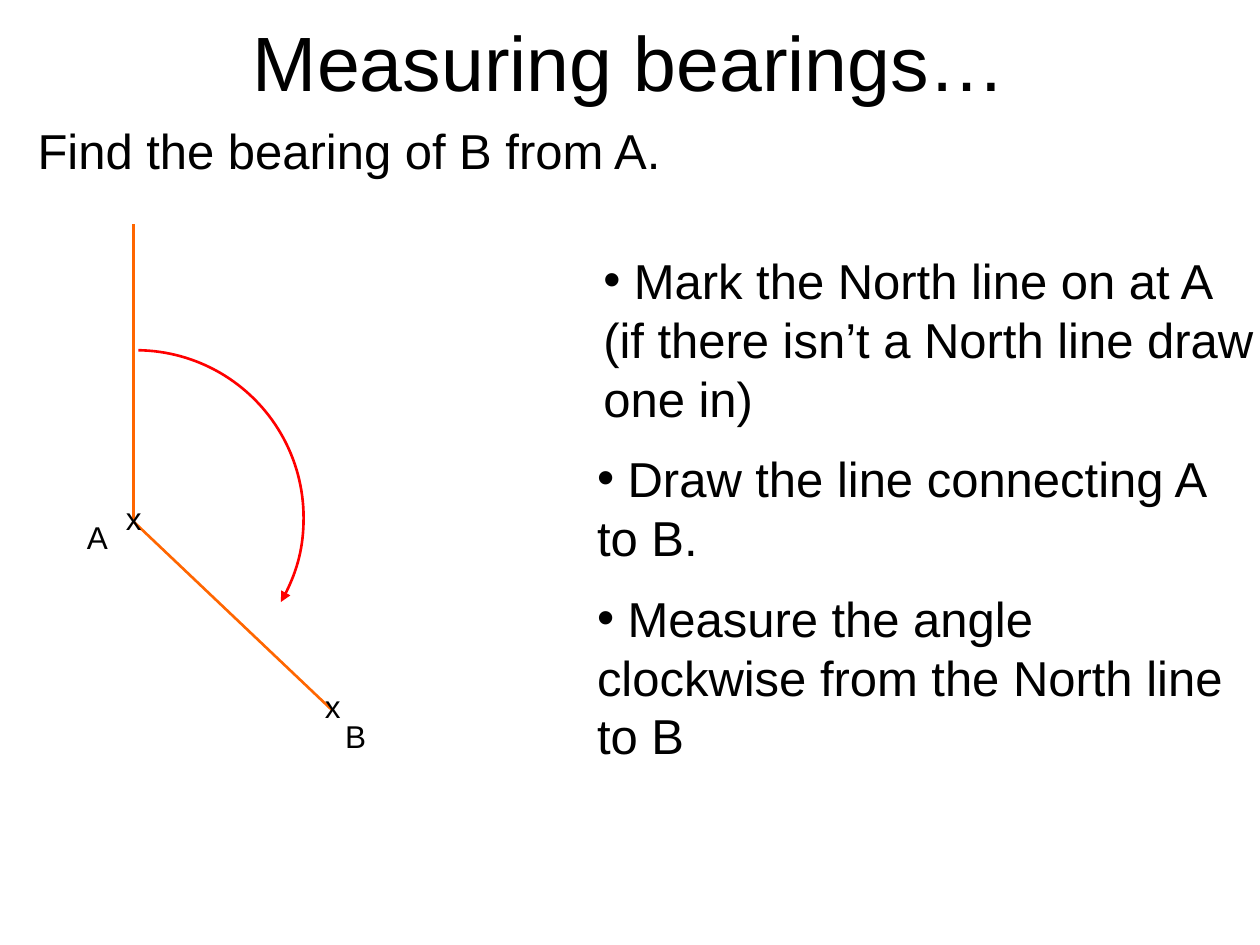
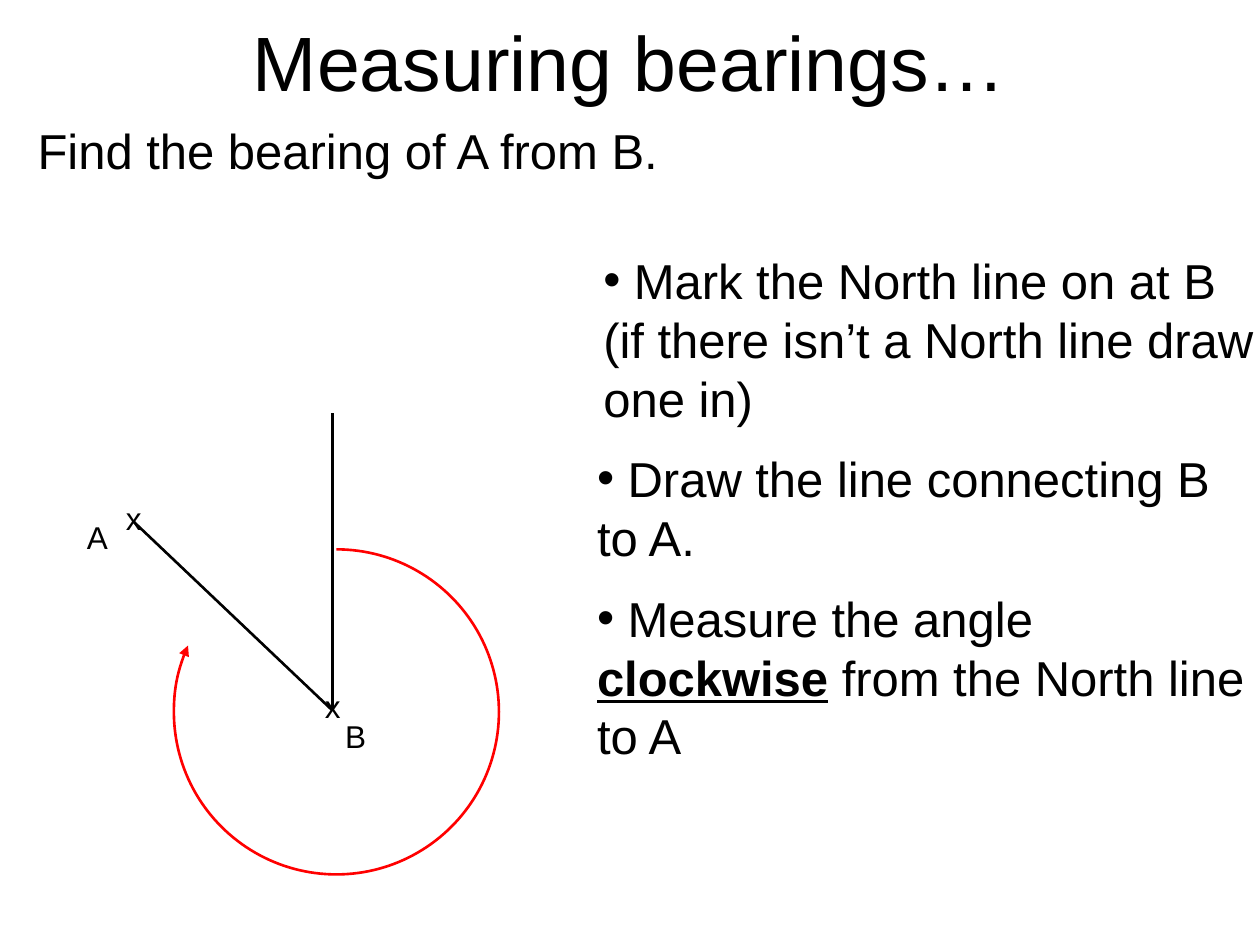
import dataclasses

import pptx
import pptx.dml.color
import pptx.enum.shapes
import pptx.enum.text
import pptx.oxml.ns
import pptx.util
from lxml import etree

Inches = pptx.util.Inches
Pt = pptx.util.Pt
Color = pptx.dml.color.RGBColor.from_string


@dataclasses.dataclass(frozen=True)
class Theme:
    font: str = "Arial"
    ink: str = "000000"
    answer: str = "FF6600"
    turn: str = "FF0000"
    title_size: int = 44
    body_size: int = 28
    label_size: int = 18
    line_width: float = 1.5


THEME = Theme()
TITLE = "Measuring bearings…"
TITLE_PLACE = (0.5, 0.05, 9, 0.87)
QUESTION_PLACE = (0.2, 0.91, 5.36, 0.57)
STEP_PLACES = [(4.69, 1.94, 5.36, 1.51), (4.64, 3.51, 5.36, 1.04), (4.64, 4.62, 5.36, 1.5)]
POINT_A = (1.06, 4.14)
POINT_B = (2.64, 5.64)
NORTH_LENGTH = 2.36
LABELS = [("A", 0.59, 4.06), ("B", 2.64, 5.64), ("x", 0.9, 3.91), ("x", 2.48, 5.4)]
LABEL_SIZE = (0.32, 0.4)


def add_child(parent, tag, **values):
    return etree.SubElement(parent, pptx.oxml.ns.qn(tag), values)


def place(shape, bounds):
    for name, value in zip(("left", "top", "width", "height"), bounds):
        setattr(shape, name, Inches(value))


def write(para, text, size, **formats):
    span = para.add_run()
    span.text = text
    span.font.color.rgb = Color(THEME.ink)
    values = {"name": THEME.font, "size": Pt(size), **formats}
    for name, value in values.items():
        setattr(span.font, name, value)


def add_title(page):
    title = page.shapes.title
    place(title, TITLE_PLACE)
    frame = title.text_frame
    values = {"auto_size": pptx.enum.text.MSO_AUTO_SIZE.NONE,
              "vertical_anchor": pptx.enum.text.MSO_ANCHOR.MIDDLE}
    for name, value in values.items():
        setattr(frame, name, value)
    frame.paragraphs[0].alignment = pptx.enum.text.PP_ALIGN.CENTER
    write(frame.paragraphs[0], TITLE, THEME.title_size)


def add_text(page, bounds, text, size):
    """Add a text box; text between asterisks is bold and underlined."""
    box = page.shapes.add_textbox(*map(Inches, bounds))
    box.text_frame.word_wrap = True
    para = box.text_frame.paragraphs[0]
    for index, part in enumerate(text.split("*")):
        stressed = index % 2 == 1
        write(para, part, size, bold=stressed, underline=stressed)
    return para


def add_step(page, bounds, text):
    para = add_text(page, bounds, " " + text, THEME.body_size)
    properties = para._p.get_or_add_pPr()
    bullet_color = add_child(properties, "a:buClr")
    add_child(bullet_color, "a:srgbClr", val=THEME.ink)
    add_child(properties, "a:buFont", typeface=THEME.font)
    add_child(properties, "a:buChar", char="•")


def style_line(shape, color):
    shape.line.color.rgb = Color(color)
    shape.line.width = Pt(THEME.line_width)


def add_line(page, start, end, color):
    line = page.shapes.add_connector(
        pptx.enum.shapes.MSO_CONNECTOR.STRAIGHT, *map(Inches, start + end))
    style_line(line, color)
    add_child(line._element.spPr, "a:effectLst")


def add_turn(page, center, radius, start, end):
    """Draw a clockwise arc with an arrowhead; angles are degrees from east."""
    x, y = center
    bounds = (x - radius, y - radius, 2 * radius, 2 * radius)
    arc = page.shapes.add_shape(pptx.enum.shapes.MSO_SHAPE.ARC, *map(Inches, bounds))
    for index, angle in enumerate((start, end)):
        # Arc angles are stored in 60000ths of a degree, adjustments in 100000ths.
        arc.adjustments[index] = angle * 0.6
    arc.fill.background()
    style_line(arc, THEME.turn)
    add_child(arc.line._get_or_add_ln(), "a:tailEnd", type="triangle")
    arc.shadow.inherit = False


def add_bearing_slide(deck, target, origin, origin_point, color, last_step, turn):
    page = deck.slides.add_slide(deck.slide_layouts[5])
    add_title(page)
    add_text(page, QUESTION_PLACE, f"Find the bearing of {target} from {origin}.",
             THEME.body_size)
    steps = [
        f"Mark the North line on at {origin} (if there isn’t a North line draw one in)",
        f"Draw the line connecting {origin} to {target}.",
        last_step,
    ]
    for bounds, step in zip(STEP_PLACES, steps):
        add_step(page, bounds, step)
    x, y = origin_point
    add_line(page, (x, y - NORTH_LENGTH), origin_point, color)
    add_line(page, POINT_A, POINT_B, color)
    for text, left, top in LABELS:
        add_text(page, (left, top, *LABEL_SIZE), text, THEME.label_size)
    add_turn(page, **turn)


def main():
    deck = pptx.Presentation()
    deck.slide_width = Inches(10)
    deck.slide_height = Inches(7.5)
    add_bearing_slide(
        deck, "B", "A", POINT_A, THEME.answer,
        "Measure the angle clockwise from the North line to B",
        {"center": (1.08, 4.11), "radius": 1.33, "start": 270.8, "end": 30.2})
    add_bearing_slide(
        deck, "A", "B", POINT_B, THEME.ink,
        "Measure the angle *clockwise* from the North line to A",
        {"center": (2.67, 5.65), "radius": 1.29, "start": 270, "end": 204.1})
    deck.save("out.pptx")


if __name__ == "__main__":
    main()
